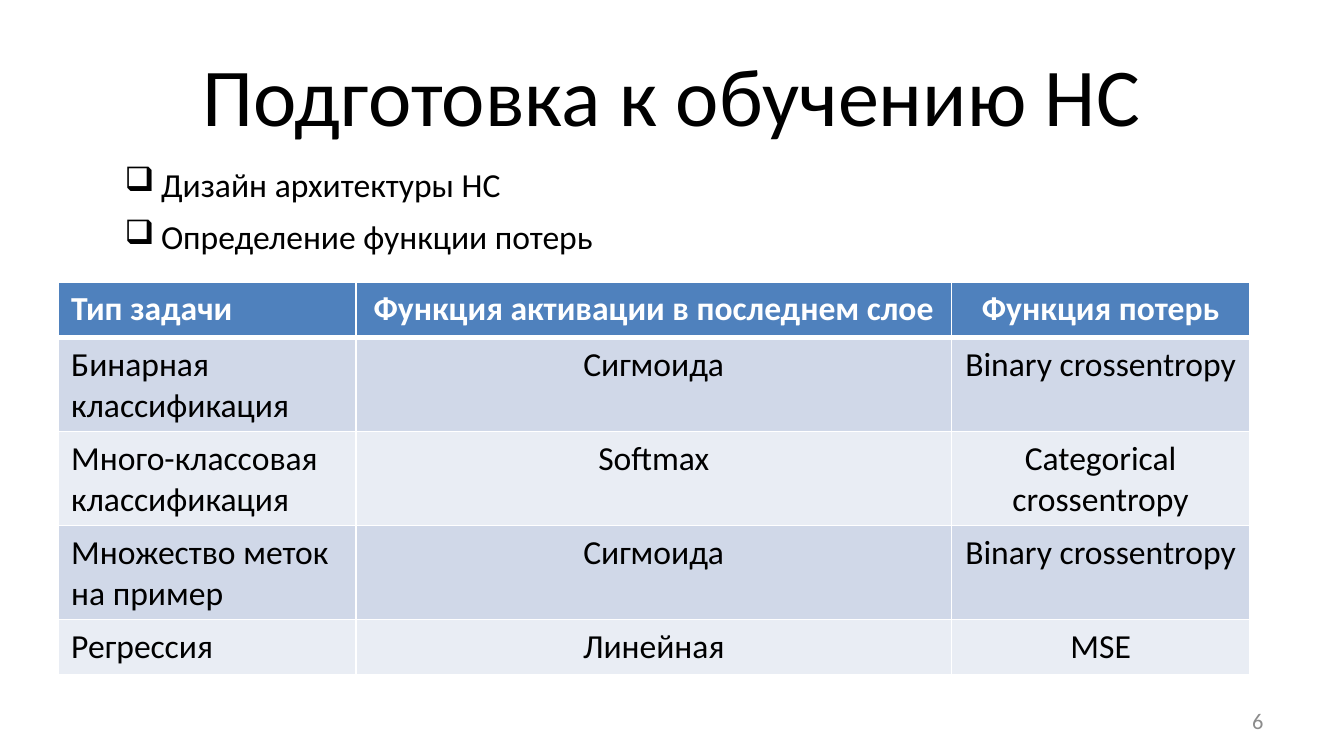
from lxml.etree import SubElement
from pptx import Presentation
from pptx.dml.color import RGBColor
from pptx.enum.text import MSO_ANCHOR as Anchor, PP_ALIGN as Align
from pptx.oxml import parse_xml
from pptx.oxml.ns import nsdecls, qn
from pptx.util import Inches, Pt

BLACK = RGBColor(0x00, 0x00, 0x00)
WHITE = RGBColor(0xFF, 0xFF, 0xFF)
GRAY = RGBColor(0x8C, 0x8C, 0x8C)
BLUE = RGBColor(0x4F, 0x81, 0xBD)
BANDS = [RGBColor(0xD0, 0xD8, 0xE8), RGBColor(0xE9, 0xED, 0xF4)]

HEADING = "Подготовка к обучению НС"
STEPS = ["Дизайн архитектуры НС", "Определение функции потерь"]
PAGE = "6"
TASKS = [
    ("Тип задачи", "Функция активации в последнем слое", "Функция потерь"),
    ("Бинарная классификация", "Сигмоида", "Binary crossentropy"),
    ("Много-классовая классификация", "Softmax", "Categorical crossentropy"),
    ("Множество меток на пример", "Сигмоида", "Binary crossentropy"),
    ("Регрессия", "Линейная", "MSE"),
]
COLUMN_WIDTHS = [2.22, 4.43, 2.22]
ROW_HEIGHT = 0.41
TABLE_HEIGHT = 2.91
BULLET_INDENT = Inches(0.27)


def write(paragraph, text, size, color=BLACK, align=Align.LEFT, bold=False):
    paragraph.alignment = align
    run = paragraph.add_run()
    run.text = text
    looks = {"name": "Calibri", "size": Pt(size), "bold": bold}
    for key, value in looks.items():
        setattr(run.font, key, value)
    run.font.color.rgb = color


def add_bullet(paragraph):
    properties = paragraph._p.get_or_add_pPr()
    properties.set("marL", str(BULLET_INDENT))
    properties.set("indent", str(-BULLET_INDENT))
    font = SubElement(properties, qn("a:buFont"))
    font.set("typeface", "Wingdings")
    font.set("charset", "2")
    SubElement(properties, qn("a:buChar")).set("char", "q")


def add_borders(cell, widths):
    properties = cell._tc.get_or_add_tcPr()
    for place, (side, width) in enumerate(widths.items()):
        properties.insert(place, parse_xml(
            f'<a:ln{side} {nsdecls("a")} w="{Pt(width)}"><a:solidFill>'
            f'<a:srgbClr val="{WHITE}"/></a:solidFill></a:ln{side}>'))


def add_text_area(slide, left, top, width, height):
    box = slide.shapes.add_textbox(*map(Inches, (left, top, width, height)))
    box.text_frame.word_wrap = True
    return box.text_frame


def add_task_table(slide):
    size = (0.43, 2.1, sum(COLUMN_WIDTHS), TABLE_HEIGHT)
    frame = slide.shapes.add_table(
        len(TASKS), len(COLUMN_WIDTHS), *map(Inches, size))
    table = frame.table
    for column, width in zip(table.columns, COLUMN_WIDTHS):
        column.width = Inches(width)
    for r, (row, texts) in enumerate(zip(table.rows, TASKS)):
        row.height = Inches(ROW_HEIGHT)
        header = r == 0
        for c, (cell, text) in enumerate(zip(row.cells, texts)):
            cell.fill.solid()
            cell.fill.fore_color.rgb = BLUE if header else BANDS[(r - 1) % 2]
            write(cell.text_frame.paragraphs[0], text, 18,
                  WHITE if header else BLACK,
                  Align.CENTER if c else Align.LEFT, header)
            add_borders(cell, {"L": 1, "R": 1, "T": 3 if r == 1 else 1,
                               "B": 3 if header else 1})
    frame.height = Inches(TABLE_HEIGHT)


def main():
    deck = Presentation()
    deck.slide_width = Inches(10)
    deck.slide_height = deck.slide_width * 9 // 16
    slide = deck.slides.add_slide(deck.slide_layouts[5])

    title = slide.shapes.title
    place = {"left": 0.5, "top": 0.23, "width": 9, "height": 0.94}
    for key, value in place.items():
        setattr(title, key, Inches(value))
    title.text_frame.vertical_anchor = Anchor.MIDDLE
    write(title.text_frame.paragraphs[0], HEADING, 44, align=Align.CENTER)

    steps = add_text_area(slide, 0.83, 1.08, 8.74, 0.89)
    for i, step in enumerate(STEPS):
        paragraph = steps.add_paragraph() if i else steps.paragraphs[0]
        write(paragraph, step, 18)
        paragraph.line_spacing = 1.3
        add_bullet(paragraph)

    page = add_text_area(slide, 7.17, 5.21, 2.33, 0.3)
    page.vertical_anchor = Anchor.MIDDLE
    write(page.paragraphs[0], PAGE, 12, GRAY, Align.RIGHT)

    add_task_table(slide)
    deck.save("out.pptx")


if __name__ == "__main__":
    main()
